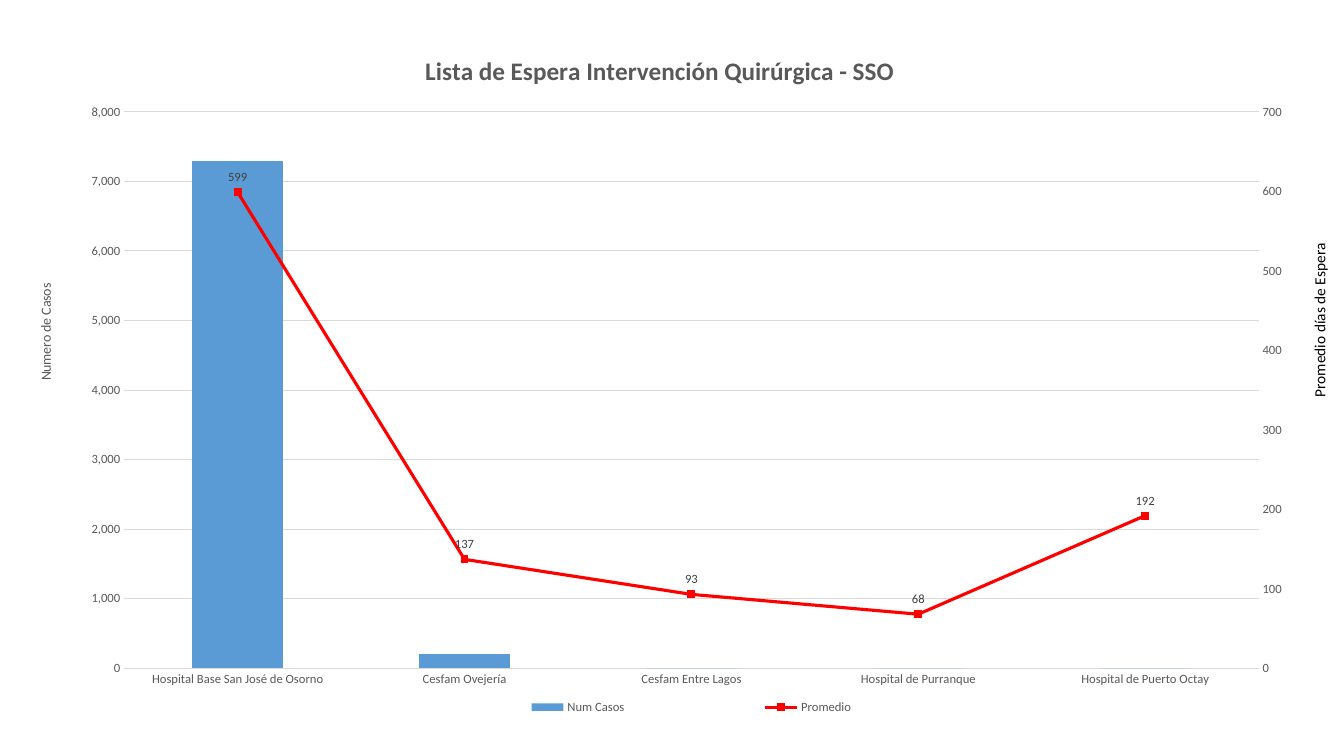
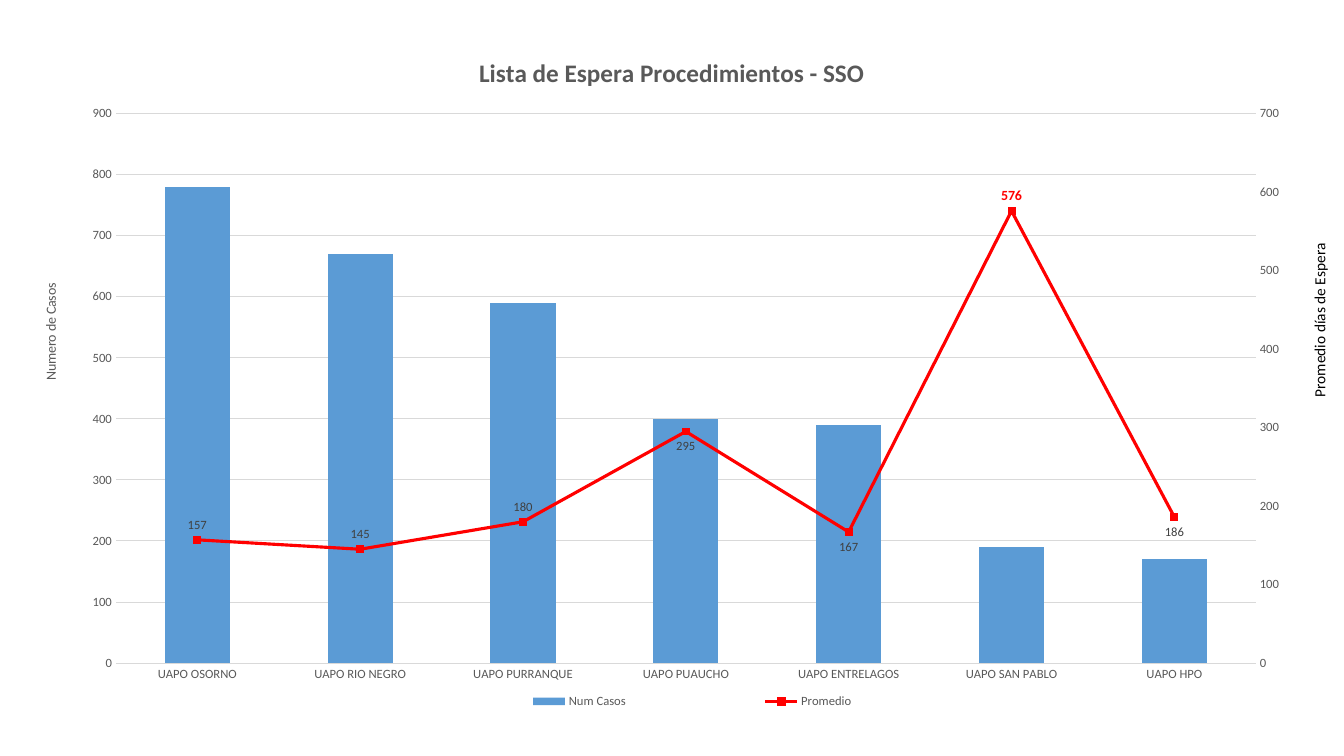
from copy import deepcopy
from lxml import etree
from pptx import Presentation
from pptx.chart.axis import CategoryAxis, ValueAxis
from pptx.chart.data import CategoryChartData
from pptx.dml.color import RGBColor
from pptx.enum.chart import XL_CHART_TYPE as ChartType
from pptx.enum.chart import XL_LABEL_POSITION as LabelPos
from pptx.enum.chart import XL_LEGEND_POSITION as LegendPos
from pptx.enum.chart import XL_MARKER_STYLE as Marker
from pptx.enum.chart import XL_TICK_MARK as Tick
from pptx.oxml import parse_xml
from pptx.oxml.ns import nsdecls, qn
from pptx.util import Cm, Pt

COLORS = {
    "cases": "5B9BD5",
    "average": "FF0000",
    "text": "595959",
    "label": "404040",
    "grid": "D9D9D9",
    "black": "000000",
}
FONT = "Calibri"
SECOND_IDS = {"cat": "50010", "val": "50020"}


class WaitingListDeck:
    def __init__(self):
        self.deck = Presentation()
        self.deck.slide_width, self.deck.slide_height = Cm(33.87), Cm(19.05)
        self.slide = None

    def new_slide(self):
        self.slide = self.deck.slides.add_slide(self.deck.slide_layouts[6])

    def style_font(self, font, size, color, bold=False):
        font.name, font.size, font.bold = FONT, Pt(size), bold
        font.color.rgb = RGBColor.from_string(COLORS[color])

    def style_line(self, line, color, width):
        line.color.rgb = RGBColor.from_string(COLORS[color])
        line.width = Pt(width)

    def place(self, part, index, inner=False, **fractions):
        for old in part.findall(qn("c:layout")):
            part.remove(old)
        layout = parse_xml(f"<c:layout {nsdecls('c')}><c:manualLayout/></c:layout>")
        settings = {"layoutTarget": "inner"} if inner else {}
        settings.update(xMode="edge", yMode="edge", **fractions)
        for tag, value in settings.items():
            etree.SubElement(layout[0], qn(f"c:{tag}")).set("val", str(value))
        part.insert(index, layout)

    def set_title(self, owner, text, size, bold, x, y):
        title = owner.axis_title if hasattr(owner, "axis_title") else owner.chart_title
        title.text_frame.text = text
        self.style_font(title.text_frame.paragraphs[0].runs[0].font, size, "text", bold)
        self.place(title._element, 1, x=x, y=y)

    def style_axis(self, axis):
        axis.major_tick_mark = axis.minor_tick_mark = Tick.NONE
        self.style_font(axis.tick_labels.font, 9, "text")

    def set_scale(self, axis, top, step):
        axis.minimum_scale, axis.maximum_scale, axis.major_unit = 0, top, step

    def move_to_second_axis(self, chart):
        plot_area = chart._chartSpace.chart.plotArea
        bars = plot_area.find(qn("c:barChart"))
        average = bars.findall(qn("c:ser"))[1]
        for flag in average.findall(qn("c:invertIfNegative")):
            average.remove(flag)
        line_plot = parse_xml(
            f'<c:lineChart {nsdecls("c")}><c:grouping val="standard"/><c:varyColors val="0"/>'
            f'<c:marker val="1"/><c:axId val="{SECOND_IDS["cat"]}"/>'
            f'<c:axId val="{SECOND_IDS["val"]}"/></c:lineChart>'
        )
        line_plot.insert(2, average)
        bars.addnext(line_plot)

        categories = deepcopy(chart.category_axis._element)
        values = deepcopy(chart.value_axis._element)
        for axis, own, other in ((categories, "cat", "val"), (values, "val", "cat")):
            axis.find(qn("c:axId")).set("val", SECOND_IDS[own])
            axis.find(qn("c:crossAx")).set("val", SECOND_IDS[other])
        values.find(qn("c:axPos")).set("val", "r")
        values.find(qn("c:crosses")).set("val", "max")
        chart.value_axis._element.addnext(values)
        values.addnext(categories)
        CategoryAxis(categories).visible = False
        self.set_scale(ValueAxis(values), 700, 100)

    def style_average(self, series, below, highlighted):
        series.smooth = False
        self.style_line(series.format.line, "average", 2.25)
        series.marker.style, series.marker.size = Marker.SQUARE, 5
        series.marker.format.fill.solid()
        series.marker.format.fill.fore_color.rgb = RGBColor.from_string(COLORS["average"])
        self.style_line(series.marker.format.line, "average", 0.75)
        labels = series.data_labels
        labels.show_value, labels.position = True, LabelPos.ABOVE
        self.style_font(labels.font, 9, "label")
        for index in below:
            label = series.points[index].data_label
            self.style_font(label.font, 9, "label")
            label.position = LabelPos.BELOW
        for index in highlighted:
            label = series.points[index].data_label
            self.style_font(label.font, 10, "average", True)
            label.position = LabelPos.ABOVE

    def combined_chart(self, title, title_x, box, plot_x, plot_w, scale, rows,
                       below=(), highlighted=()):
        names, cases, averages = zip(*rows)
        data = CategoryChartData(number_format="#,##0")
        data.categories = names
        data.add_series("Num Casos", cases)
        data.add_series("Promedio", averages)
        chart = self.slide.shapes.add_chart(
            ChartType.COLUMN_CLUSTERED, *map(Cm, box), data).chart
        self.style_font(chart.font, 10, "black")
        self.set_title(chart, title, 18, True, title_x, 0.03)

        bars = chart.plots[0]
        bars.gap_width, bars.vary_by_categories = 150, False
        fill = bars.series[0].format.fill
        fill.solid()
        fill.fore_color.rgb = RGBColor.from_string(COLORS["cases"])

        category_axis, value_axis = chart.category_axis, chart.value_axis
        self.style_axis(category_axis)
        self.style_line(category_axis.format.line, "grid", 0.75)
        self.style_axis(value_axis)
        value_axis.format.line.fill.background()
        value_axis.has_major_gridlines = False
        self.move_to_second_axis(chart)
        self.set_scale(value_axis, *scale)
        self.style_line(value_axis.major_gridlines.format.line, "grid", 0.75)
        self.set_title(value_axis, "Numero de Casos", 10, False, 0.01, 0.36)
        body = value_axis.axis_title.text_frame._txBody.bodyPr
        body.set("rot", "-5400000")
        body.set("vert", "horz")
        self.style_average(chart.plots[1].series[0], below, highlighted)

        chart.has_legend = True
        legend = chart.legend
        legend.position, legend.include_in_layout = LegendPos.BOTTOM, False
        self.style_font(legend.font, 9, "text")
        self.place(legend._element, 1, x=0.29, y=0.94, w=0.46, h=0.05)
        self.place(chart._chartSpace.chart.plotArea, 0, inner=True,
                   x=plot_x, y=0.12, w=plot_w, h=0.79)

    def right_axis_caption(self, text):
        caption = self.slide.shapes.add_textbox(Cm(32.89), Cm(5.82), Cm(0.79), Cm(4.45))
        frame = caption.text_frame
        frame.word_wrap = False
        frame._txBody.bodyPr.set("vert", "vert270")
        frame.text = text
        self.style_font(frame.paragraphs[0].runs[0].font, 11, "black")


SLIDES = [
    dict(
        title="Lista de Espera Intervención Quirúrgica - SSO",
        title_x=0.31,
        box=(0.53, 0.69, 32.49, 17.75),
        plot_x=0.08,
        plot_w=0.88,
        scale=(8000, 1000),
        rows=[
            ("Hospital Base San José de Osorno", 7300, 599),
            ("Cesfam Ovejería", 200, 137),
            ("Cesfam Entre Lagos", 0, 93),
            ("Hospital de Purranque", 0, 68),
            ("Hospital de Puerto Octay", 0, 192),
        ],
    ),
    dict(
        title="Lista de Espera Procedimientos - SSO",
        title_x=0.35,
        box=(0.66, 0.76, 32.28, 17.53),
        plot_x=0.07,
        plot_w=0.89,
        scale=(900, 100),
        rows=[
            ("UAPO OSORNO", 780, 157),
            ("UAPO RIO NEGRO", 670, 145),
            ("UAPO PURRANQUE", 590, 180),
            ("UAPO PUAUCHO", 400, 295),
            ("UAPO ENTRELAGOS", 390, 167),
            ("UAPO SAN PABLO", 190, 576),
            ("UAPO HPO", 170, 186),
        ],
        below=(3, 4, 6),
        highlighted=(5,),
    ),
]


def main():
    waiting_lists = WaitingListDeck()
    for content in SLIDES:
        waiting_lists.new_slide()
        waiting_lists.combined_chart(**content)
        waiting_lists.right_axis_caption("Promedio días de Espera")
    waiting_lists.deck.save("out.pptx")


if __name__ == "__main__":
    main()
